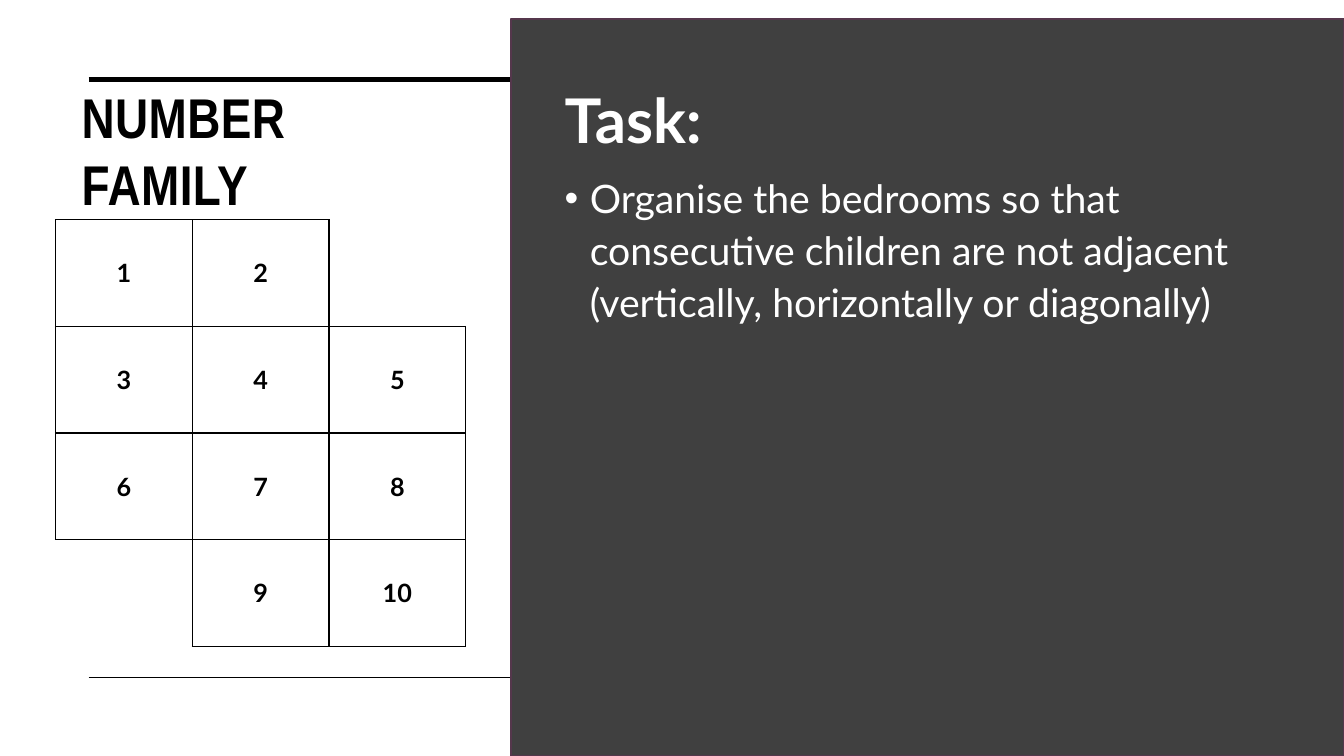
from itertools import count, product

from lxml.etree import SubElement
from pptx import Presentation
from pptx.dml.color import RGBColor
from pptx.enum.shapes import MSO_CONNECTOR, MSO_SHAPE
from pptx.enum.text import MSO_ANCHOR, MSO_AUTO_SIZE, PP_ALIGN
from pptx.oxml import parse_xml
from pptx.oxml.ns import nsdecls, qn
from pptx.util import Inches, Pt

THEME = {
    "ink": RGBColor(0, 0, 0),
    "paper": RGBColor(255, 255, 255),
    "panel": RGBColor(0x40, 0x40, 0x40),
    "panel_edge": RGBColor(0x55, 0x37, 0x4C),
    "heading_font": "Arial Narrow",
    "text_font": "Lato",
    "heading": Pt(40),
    "task": Pt(44),
    "instruction": Pt(28),
    "room": Pt(18),
}

deck = Presentation()
deck.slide_width, deck.slide_height = Inches(13.33), Inches(7.5)
slide = deck.slides.add_slide(deck.slide_layouts[1])


def area(left, top, width, height):
    across, down = deck.slide_width / 100, deck.slide_height / 100
    return int(left * across), int(top * down), int(width * across), int(height * down)


def style(paragraph, font_name, size, color, bold):
    for run in paragraph.runs:
        run.font.name, run.font.size, run.font.bold = font_name, size, bold
        run.font.color.rgb = color


for height, weight in ((10.53, 3.5), (89.6, 1)):
    start, level, end, _ = area(6.6, height, 93.47, 0)
    rule = slide.shapes.add_connector(MSO_CONNECTOR.STRAIGHT, start, level, end, level)
    rule.line.color.rgb, rule.line.width = THEME["ink"], Pt(weight)
    SubElement(rule.element.spPr, qn("a:effectLst"))

panel = slide.shapes.add_shape(MSO_SHAPE.RECTANGLE, *area(38.03, 2.5, 61.97, 97.5))
panel.shadow.inherit = False
panel.fill.solid()
panel.fill.fore_color.rgb = THEME["panel"]
panel.line.color.rgb, panel.line.width = THEME["panel_edge"], Pt(1)

heading, task = slide.shapes.title, slide.placeholders[1]
for placeholder, place in (
    (heading, area(5.33, 10.27, 29.93, 24.4)),
    (task, area(41.26, 9.2, 56.41, 86.4)),
):
    placeholder.left, placeholder.top, placeholder.width, placeholder.height = place
    placeholder.text_frame.word_wrap = True
    placeholder.text_frame.auto_size = MSO_AUTO_SIZE.NONE
    placeholder.text_frame.vertical_anchor = MSO_ANCHOR.TOP
    placeholder.element.getparent().append(placeholder.element)

heading.text_frame.text = "NUMBER FAMILY"
heading.text_frame.margin_right = Inches(0.5)
family = heading.text_frame.paragraphs[0]
family.alignment = PP_ALIGN.LEFT
style(family, THEME["heading_font"], THEME["heading"], THEME["ink"], True)
family.runs[0].font._element.set("spc", "30")

task.text_frame.text = "Task:"
label = task.text_frame.paragraphs[0]
instruction = task.text_frame.add_paragraph()
instruction.text = (
    "Organise the bedrooms so that consecutive children are not adjacent "
    "(vertically, horizontally or diagonally)"
)
for paragraph, indent, bullet, size, before in (
    (label, 0, None, THEME["task"], 0),
    (instruction, 0.25, "•", THEME["instruction"], 10),
):
    properties = paragraph._p.get_or_add_pPr()
    properties.set("marL", str(Inches(indent)))
    properties.set("indent", str(-Inches(indent)))
    paragraph.line_spacing, paragraph.space_before = 1.1, Pt(before)
    if bullet:
        SubElement(properties, qn("a:buFont")).set("typeface", "Arial")
        SubElement(properties, qn("a:buChar")).set("char", bullet)
    else:
        SubElement(properties, qn("a:buNone"))
    style(paragraph, THEME["text_font"], size, THEME["paper"], bullet is None)

ROWS, COLUMNS = 4, 3
missing_rooms = {(0, 2): "LB", (3, 0): "RT"}
house = slide.shapes.add_table(ROWS, COLUMNS, *area(4.13, 29.07, 30.53, 56.4)).table
house.first_row = house.horz_banding = False
children = count(1)
for row, column in product(range(ROWS), range(COLUMNS)):
    room = house.cell(row, column)
    room.fill.background()
    room.vertical_anchor = MSO_ANCHOR.MIDDLE
    walls = missing_rooms.get((row, column), "LRTB")
    for position, side in enumerate("LRTB"):
        paint = f'<a:solidFill><a:srgbClr val="{THEME["ink"]}"/></a:solidFill>'
        wall = parse_xml(
            f'<a:ln{side} {nsdecls("a")} w="{Pt(1)}">'
            f'{paint if side in walls else "<a:noFill/>"}</a:ln{side}>'
        )
        room._tc.get_or_add_tcPr().insert(position, wall)
    if (row, column) not in missing_rooms:
        room.text_frame.text = str(next(children))
        child = room.text_frame.paragraphs[0]
        child.alignment = PP_ALIGN.CENTER
        style(child, THEME["text_font"], THEME["room"], THEME["ink"], True)

deck.save("out.pptx")
